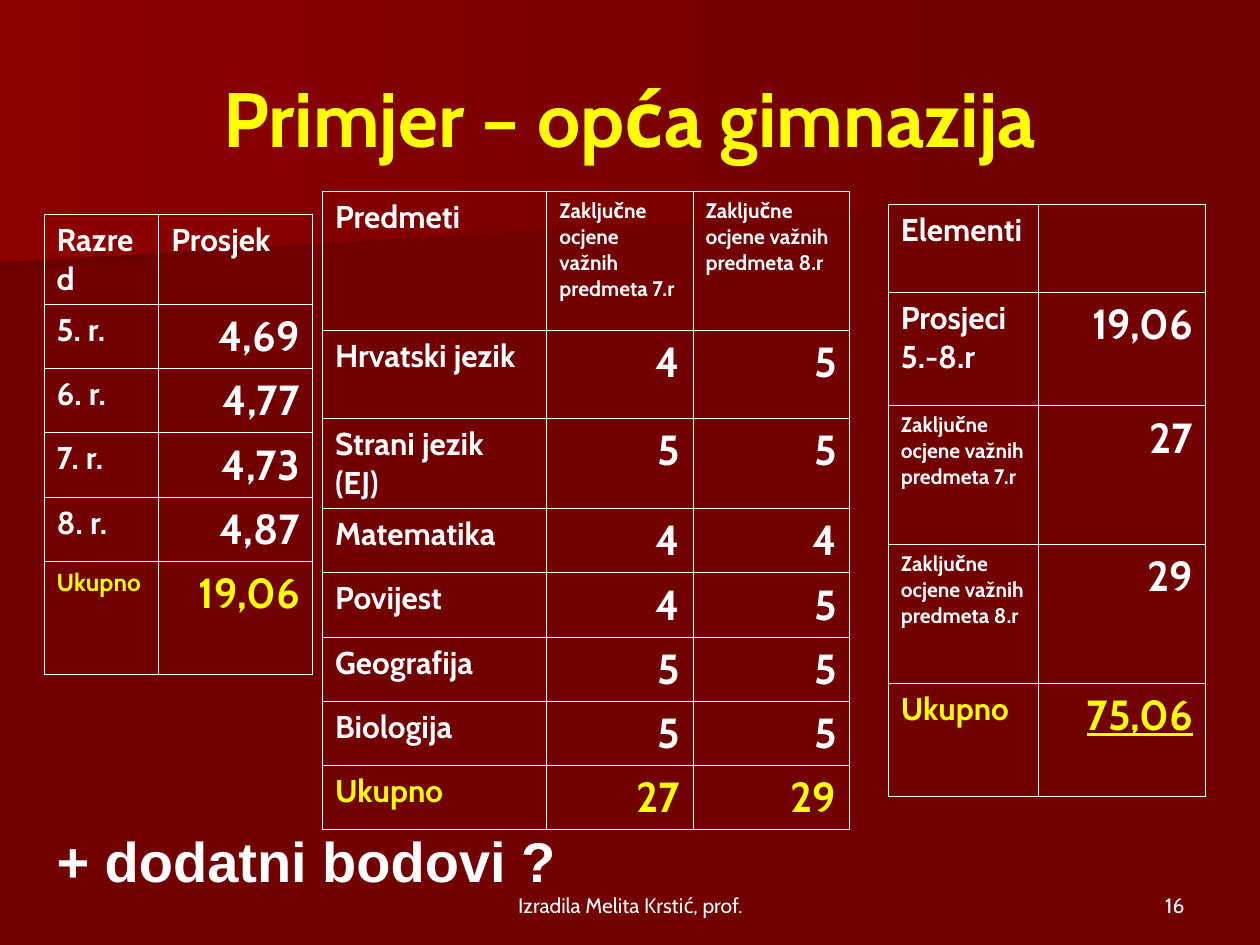
from dataclasses import dataclass

from lxml import etree
from pptx import Presentation
from pptx.dml.color import RGBColor
from pptx.enum.text import MSO_ANCHOR as Anchor, PP_ALIGN as Align
from pptx.oxml.ns import qn
from pptx.util import Inches, Pt


@dataclass(frozen=True)
class Theme:
    font: str = "Cabin"
    plain_font: str = "Arial"
    back: str = "720000"
    shade: str = "6B0000"
    glow: str = "8C0000"
    text: str = "FFFFFF"
    accent: str = "FFFF00"
    title: int = 44
    note: int = 32
    number: int = 24
    label: int = 18
    small_total: int = 14
    small: int = 12
    border: float = 0.45


theme = Theme()


def add_text(frame, text, size, color=theme.text, bold=True, align=Align.LEFT, font=theme.font):
    """Put one run in the first paragraph of a frame and return both."""
    para = frame.paragraphs[0]
    para.alignment = align
    span = para.add_run()
    span.text = text
    span.font.name = font
    span.font.size = Pt(size)
    span.font.bold = bold
    span.font.color.rgb = RGBColor.from_string(color)
    return para, span


def add_borders(cell):
    props = cell._tc.get_or_add_tcPr()
    for index, side in enumerate(("lnL", "lnR", "lnT", "lnB")):
        line = etree.Element(qn(f"a:{side}"), w=str(Pt(theme.border)))
        fill = etree.SubElement(line, qn("a:solidFill"))
        etree.SubElement(fill, qn("a:srgbClr"), val=theme.text)
        props.insert(index, line)


deck = Presentation()
deck.slide_width, deck.slide_height = Inches(10), Inches(7.5)
page = deck.slides.add_slide(deck.slide_layouts[6])
page.background.fill.solid()
page.background.fill.fore_color.rgb = RGBColor.from_string(theme.back)

# Background bands
bands = [
    ([(7.78, 1.53), (0, 2.16), (0, 1.01), (7.79, 1.01), (7.78, 1.28)], theme.shade),
    ([(7.91, 1.62), (0, 2.08), (0, 0), (7.92, 0)], theme.glow),
]
for points, end_color in bands:
    corners = [(Inches(x), Inches(y)) for x, y in points]
    outline = page.shapes.build_freeform(*corners[0])
    outline.add_line_segments(corners[1:], close=True)
    band = outline.convert_to_shape()
    band.shadow.inherit = False
    band.line.fill.background()
    band.fill.gradient()
    band.fill.gradient_angle = 180
    for stop, position, color in zip(band.fill.gradient_stops, (0, 1), (theme.back, end_color)):
        stop.position = position
        stop.color.rgb = RGBColor.from_string(color)

# Tables: left, top, column widths, row heights, size of the total label, rows
grade_7, grade_8 = (f"Zaključne ocjene važnih predmeta {grade}.r" for grade in (7, 8))
tables = [
    (0.35, 1.7, [0.91, 1.22], [0.7] + [0.5] * 4 + [0.9], theme.small_total, [
        ["Razred", "Prosjek"],
        ["5. r.", "4,69"],
        ["6. r.", "4,77"],
        ["7. r.", "4,73"],
        ["8. r.", "4,87"],
        ["Ukupno", "19,06"],
    ]),
    (2.56, 1.52, [1.78, 1.16, 1.24], [1.1, 0.7, 0.7] + [0.5] * 5, theme.label, [
        ["Predmeti", grade_7, grade_8],
        ["Hrvatski jezik", "4", "5"],
        ["Strani jezik (EJ)", "5", "5"],
        ["Matematika", "4", "4"],
        ["Povijest", "4", "5"],
        ["Geografija", "5", "5"],
        ["Biologija", "5", "5"],
        ["Ukupno", "27", "29"],
    ]),
    (7.05, 1.62, [1.19, 1.33], [0.7, 0.9, 1.1, 1.1, 0.9], theme.label, [
        ["Elementi", ""],
        ["Prosjeci 5.-8.r", "19,06"],
        [grade_7, "27"],
        [grade_8, "29"],
        ["Ukupno", "75,06"],
    ]),
]
for left, top, widths, heights, total_size, rows in tables:
    table = page.shapes.add_table(
        len(rows), len(widths), Inches(left), Inches(top),
        Inches(sum(widths)), Inches(sum(heights))).table
    table.first_row = table.horz_banding = False
    for column, width in zip(table.columns, widths):
        column.width = Inches(width)
    for row, height in zip(table.rows, heights):
        row.height = Inches(height)
    for r, values in enumerate(rows):
        is_total = values[0] == "Ukupno"
        for c, value in enumerate(values):
            cell = table.cell(r, c)
            cell.fill.background()
            add_borders(cell)
            if not value:
                continue
            is_number = r > 0 and c > 0
            if is_number:
                size = theme.number
            elif value in (grade_7, grade_8):
                size = theme.small
            else:
                size = total_size if is_total else theme.label
            para, span = add_text(
                cell.text_frame, value, size,
                color=theme.accent if is_total else theme.text,
                align=Align.RIGHT if is_number else Align.LEFT)
            para.line_spacing = 1.01
            if value == "75,06":
                span.font.underline = True

# Title, footer and closing note
texts = [
    ((0.5, 0.3, 9, 1.25), Anchor.MIDDLE, "Primjer – opća gimnazija",
     dict(size=theme.title, color=theme.accent, align=Align.CENTER)),
    ((7.17, 6.83, 2.33, 0.5), Anchor.BOTTOM, "16",
     dict(size=theme.small, bold=False, align=Align.RIGHT)),
    ((3.42, 6.83, 3.17, 0.5), Anchor.BOTTOM, "Izradila Melita Krstić, prof.",
     dict(size=theme.small, bold=False, align=Align.CENTER)),
    ((0.35, 6.51, 5.35, 0.64), Anchor.TOP, "+ dodatni bodovi ?",
     dict(size=theme.note, font=theme.plain_font)),
]
for place, anchor, text, style in texts:
    box = page.shapes.add_textbox(*map(Inches, place))
    box.text_frame.word_wrap = True
    box.text_frame.vertical_anchor = anchor
    add_text(box.text_frame, text, **style)

deck.save("out.pptx")
